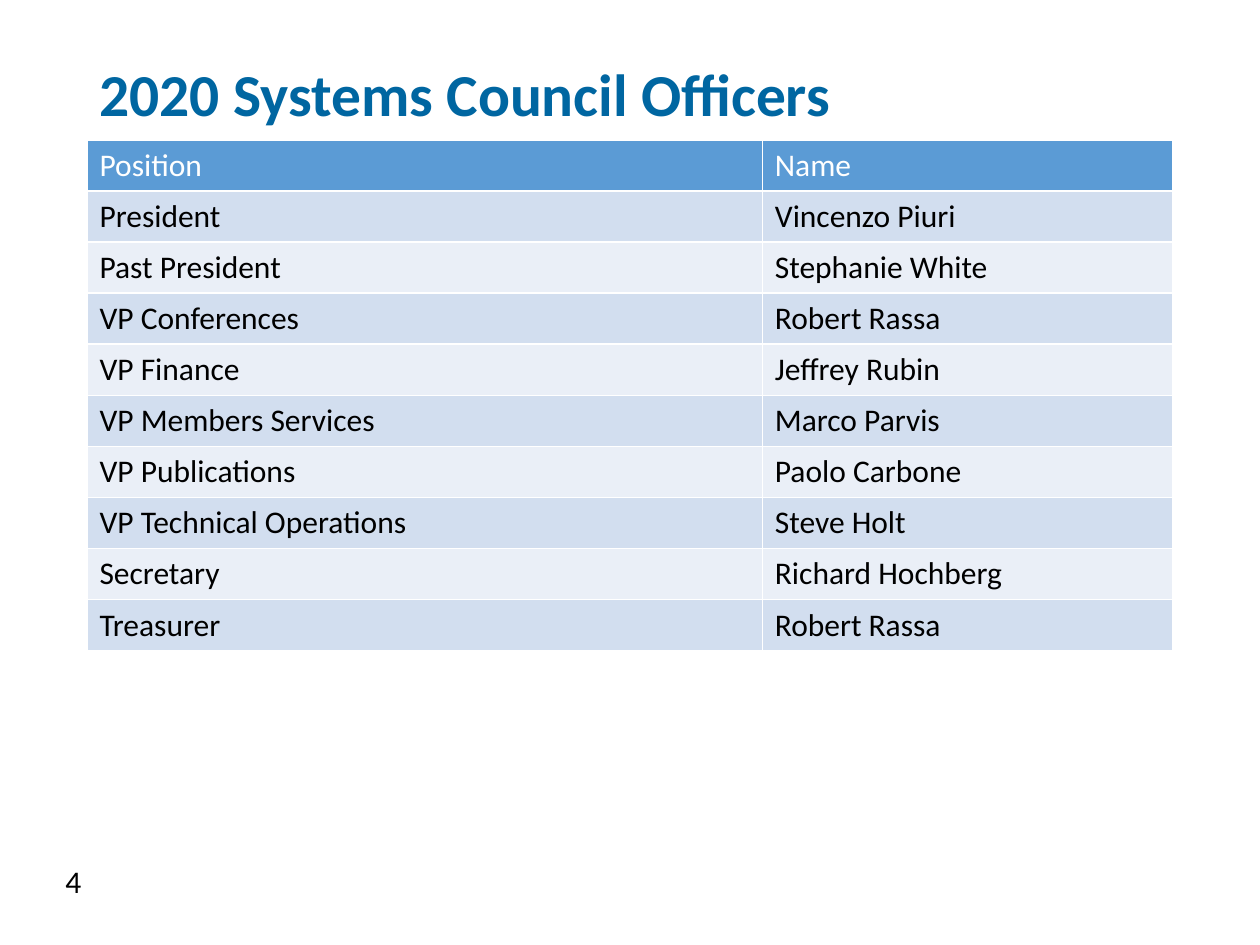
from pptx import Presentation
from pptx.dml.color import RGBColor
from pptx.enum import text
from pptx.oxml.ns import qn
from pptx.util import Pt
from lxml import etree

# Content
TITLE = "2020 Systems Council Officers"
PAGE_NUMBER = "4"
OFFICERS = [
    ("Position", "Name"),
    ("President", "Vincenzo Piuri"),
    ("Past President", "Stephanie White"),
    ("VP Conferences", "Robert Rassa"),
    ("VP Finance", "Jeffrey Rubin"),
    ("VP Members Services", "Marco Parvis"),
    ("VP Publications", "Paolo Carbone"),
    ("VP Technical Operations", "Steve Holt"),
    ("Secretary", "Richard Hochberg"),
    ("Treasurer", "Robert Rassa"),
]

# Layout and colours
LEFT, TABLE_TOP, ROW_HEIGHT = 49.68, 79.92, 29.2
COLUMN_WIDTHS = (385.92, 234.72)
TABLE_WIDTH = sum(COLUMN_WIDTHS)
HEADER_FILL, BAND_FILLS = "5B9BD5", ("EAEFF7", "D2DEEF")
WHITE, BLACK, TITLE_BLUE = "FFFFFF", "000000", "0066A1"


def color(value):
    return RGBColor.from_string(value)


def add_run(paragraph, words, size, font_color, bold=False):
    run = paragraph.add_run()
    run.text = words
    run.font.name = "Calibri"
    run.font.size = Pt(size)
    run.font.bold = bold
    run.font.color.rgb = color(font_color)


def add_borders(cell, line_color, width):
    properties = cell._tc.get_or_add_tcPr()
    for side in ("lnL", "lnR", "lnT", "lnB"):
        line = etree.SubElement(properties, qn(f"a:{side}"), w=str(Pt(width)))
        fill = etree.SubElement(line, qn("a:solidFill"))
        etree.SubElement(fill, qn("a:srgbClr"), val=line_color)


presentation = Presentation()
presentation.slide_width, presentation.slide_height = Pt(720), Pt(540)
slide = presentation.slides.add_slide(presentation.slide_layouts[5])

# Title
title = slide.shapes.title
title.left, title.top = Pt(LEFT), Pt(33.84)
title.width, title.height = Pt(TABLE_WIDTH), Pt(43.92)
title.text_frame.vertical_anchor = text.MSO_ANCHOR.BOTTOM
title.text_frame.auto_size = text.MSO_AUTO_SIZE.NONE
paragraph = title.text_frame.paragraphs[0]
paragraph.alignment = text.PP_ALIGN.LEFT
paragraph.line_spacing = 0.9
add_run(paragraph, TITLE, 34, TITLE_BLUE, bold=True)

# Officers table
table = slide.shapes.add_table(
    len(OFFICERS), len(COLUMN_WIDTHS), Pt(LEFT), Pt(TABLE_TOP),
    Pt(TABLE_WIDTH), Pt(ROW_HEIGHT * len(OFFICERS))).table
for column, width in zip(table.columns, COLUMN_WIDTHS):
    column.width = Pt(width)
for row_index, officer in enumerate(OFFICERS):
    table.rows[row_index].height = Pt(ROW_HEIGHT)
    is_header = row_index == 0
    row_fill = HEADER_FILL if is_header else BAND_FILLS[row_index % 2]
    for column_index, words in enumerate(officer):
        cell = table.cell(row_index, column_index)
        add_borders(cell, WHITE, 1)
        cell.fill.solid()
        cell.fill.fore_color.rgb = color(row_fill)
        add_run(cell.text_frame.paragraphs[0], words, 18,
                WHITE if is_header else BLACK)

# Page number
number_box = slide.shapes.add_textbox(Pt(30.24), Pt(488.88), Pt(38.16), Pt(28.8))
number_box.text_frame.word_wrap = True
add_run(number_box.text_frame.paragraphs[0], PAGE_NUMBER, 18, BLACK)

presentation.save("out.pptx")
